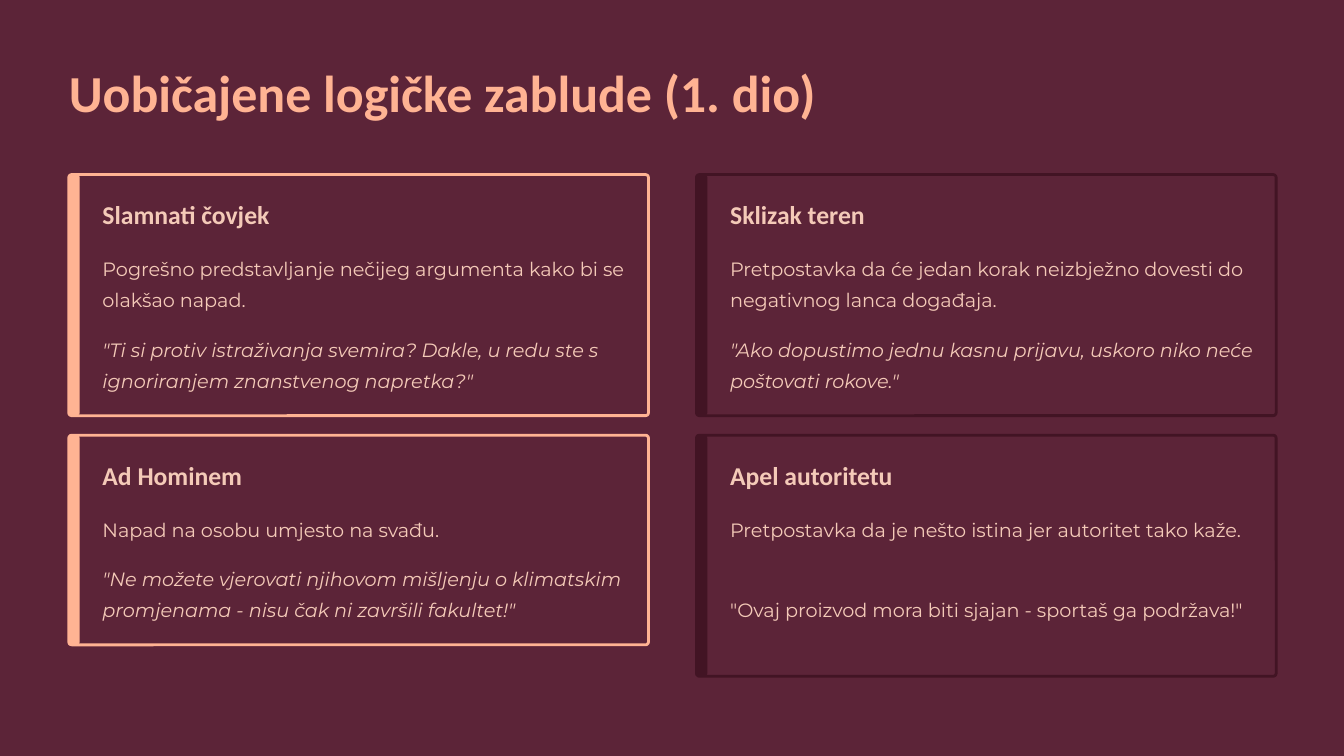
"""Build a slide with four cards on common logical fallacies."""
from pptx import Presentation
from pptx.dml.color import RGBColor
from pptx.enum.shapes import MSO_SHAPE
from pptx.enum.text import MSO_ANCHOR, PP_ALIGN
from pptx.util import Cm, Pt

ROUNDED = MSO_SHAPE.ROUNDED_RECTANGLE
TOP = MSO_ANCHOR.TOP
LEFT = PP_ALIGN.LEFT

PLUM, PEACH, WINE, BLUSH = "5C2438", "FFB393", "421424", "F4CAB8"

TITLE = "Uobičajene logičke zablude (1. dio)"
# accent, then cards: heading, definition, definition lines, example, example italic
COLUMNS = [
    (PEACH, [
        ("Slamnati čovjek",
         "Pogrešno predstavljanje nečijeg argumenta kako bi se olakšao napad.", 2,
         "\"Ti si protiv istraživanja svemira? Dakle, u redu ste s "
         "ignoriranjem znanstvenog napretka?\"", True),
        ("Ad Hominem",
         "Napad na osobu umjesto na svađu.", 1,
         "\"Ne možete vjerovati njihovom mišljenju o klimatskim "
         "promjenama - nisu čak ni završili fakultet!\"", True),
    ]),
    (WINE, [
        ("Sklizak teren",
         "Pretpostavka da će jedan korak neizbježno dovesti do "
         "negativnog lanca događaja.", 2,
         "\"Ako dopustimo jednu kasnu prijavu, uskoro niko neće "
         "poštovati rokove.\"", True),
        ("Apel autoritetu",
         "Pretpostavka da je nešto istina jer autoritet tako kaže.", 2,
         "\"Ovaj proizvod mora biti sjajan - sportaš ga podržava!\"", False),
    ]),
]

MARGIN, CARDS_TOP = 2.08, 5.28
CARD_WIDTH, COLUMN_GAP, ROW_GAP = 17.53, 1.45, 0.59
BAR_WIDTH, RADIUS = 0.33, 0.0875
INSET, TEXT_WIDTH, LINE = 1.02, 15.82, 0.95
HEADING_DROP, DEFINITION_DROP, TEXT_GAP, BOTTOM = 0.69, 2.26, 0.54, 0.69


def color(value):
    return RGBColor.from_string(value)


def write(frame, text, size, spacing, font, ink, bold=False, italic=False):
    frame.word_wrap = True
    frame.vertical_anchor = TOP
    frame.margin_left = frame.margin_right = 0
    frame.margin_top = frame.margin_bottom = 0
    paragraph = frame.paragraphs[0]
    paragraph.alignment = LEFT
    paragraph.line_spacing = Pt(spacing)
    run = paragraph.add_run()
    run.text = text
    run.font.size = Pt(size)
    run.font.name = font
    run.font.bold = bold
    run.font.italic = italic
    run.font.color.rgb = color(ink)


def add_text(slide, left, top, height, *style, **emphasis):
    box = slide.shapes.add_textbox(Cm(left), Cm(top), Cm(TEXT_WIDTH), Cm(height))
    write(box.text_frame, *style, **emphasis)


def add_panel(slide, left, top, width, height, fill, outline=None):
    panel = slide.shapes.add_shape(ROUNDED, Cm(left), Cm(top), Cm(width), Cm(height))
    panel.adjustments[0] = RADIUS / min(width, height)
    panel.shadow.inherit = False
    panel.fill.solid()
    panel.fill.fore_color.rgb = color(fill)
    if outline:
        panel.line.color.rgb = color(outline)
        panel.line.width = Pt(2.4)
    else:
        panel.line.fill.background()


def add_card(slide, left, top, accent, card):
    heading, definition, lines, example, italic = card
    example_drop = DEFINITION_DROP + lines * LINE + TEXT_GAP
    height = example_drop + 2 * LINE + BOTTOM
    add_panel(slide, left, top, CARD_WIDTH, height, PLUM, accent)
    add_panel(slide, left, top, BAR_WIDTH, height, accent)
    text_left = left + INSET
    add_text(slide, text_left, top + HEADING_DROP, 1,
             heading, 22, 28, "Calibri", BLUSH, bold=True)
    add_text(slide, text_left, top + DEFINITION_DROP, lines * LINE,
             definition, 16.5, 26.5, "Montserrat", BLUSH)
    add_text(slide, text_left, top + example_drop, 2 * LINE,
             example, 16.5, 26.5, "Montserrat", BLUSH, italic=italic)
    return height


def main():
    deck = Presentation()
    deck.slide_width, deck.slide_height = Cm(40.64), Cm(22.86)
    slide = deck.slides.add_slide(deck.slide_layouts[5])
    slide.background.fill.solid()
    slide.background.fill.fore_color.rgb = color(PLUM)

    title = slide.shapes.title
    title.left, title.top = Cm(MARGIN), Cm(1.75)
    title.width, title.height = Cm(25.4), Cm(1.98)
    write(title.text_frame, TITLE, 44.5, 56, "Calibri", PEACH, bold=True)

    for column, (accent, cards) in enumerate(COLUMNS):
        left = MARGIN + column * (CARD_WIDTH + COLUMN_GAP)
        top = CARDS_TOP
        for card in cards:
            top += add_card(slide, left, top, accent, card) + ROW_GAP

    deck.save("out.pptx")


if __name__ == "__main__":
    main()
